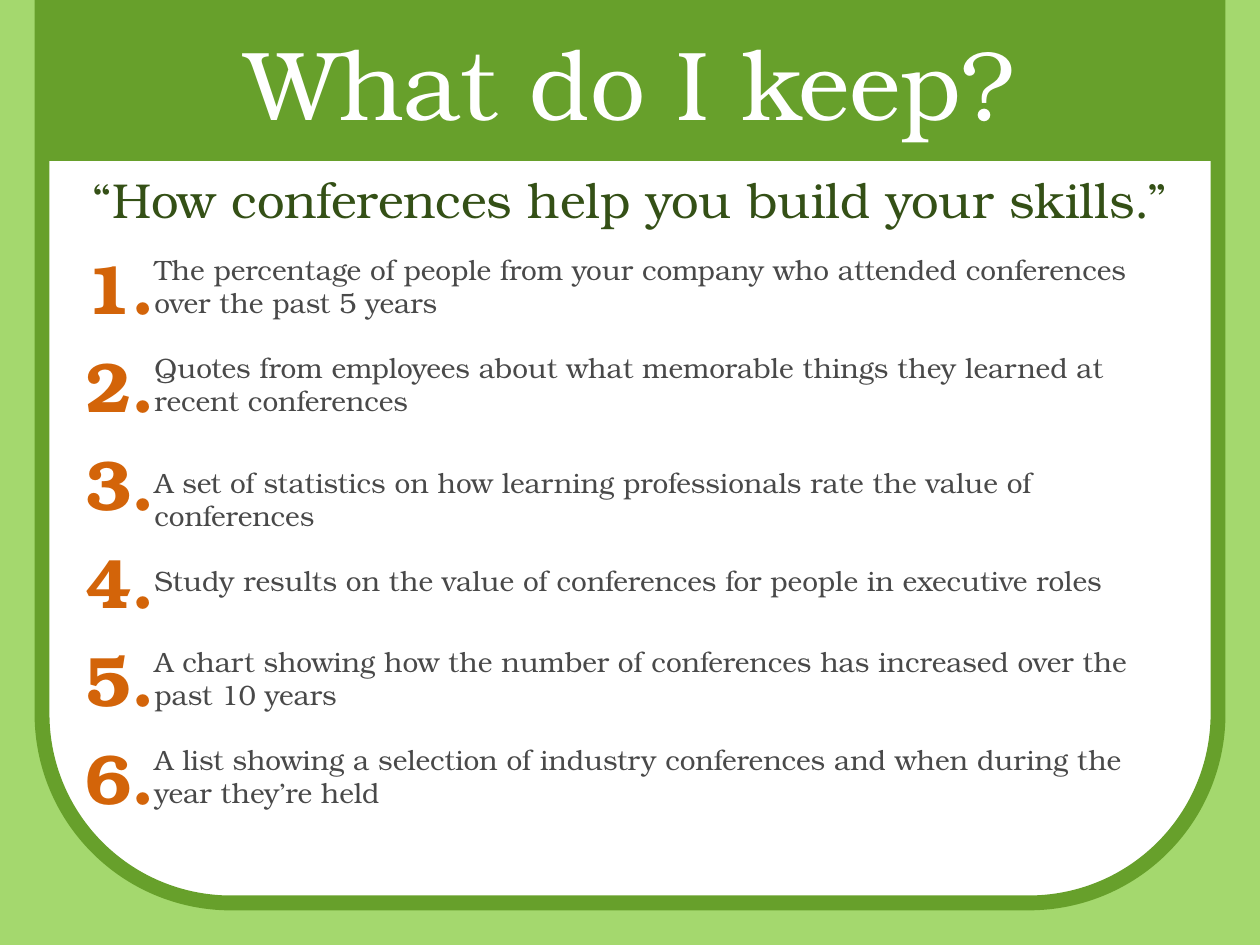
from pptx import Presentation
from pptx.dml.color import RGBColor
from pptx.enum.shapes import MSO_SHAPE as SHAPE
from pptx.enum.text import MSO_AUTO_SIZE as AUTO, PP_ALIGN as ALIGN
from pptx.util import Emu, Pt

FONT = "TeX Gyre Bonum"
GREEN, LIGHT, DARK = "67A02B", "A4D86E", "345016"
WHITE, ORANGE, GREY = "FFFFFF", "D36409", "494949"

TITLE = "What do I keep?"
SUBTITLE = "“How conferences help you build your skills.”"
# Each item: text, lines its box is sized for
ITEMS = [
    ("The percentage of people from your company who attended conferences over the past 5 years", 2),
    ("Quotes from employees about what memorable things they learned at recent conferences", 2),
    ("A set of statistics on how learning professionals rate the value of conferences", 1),
    ("Study results on the value of conferences for people in executive roles", 1),
    ("A chart showing how the number of conferences has increased over the past 10 years", 2),
    ("A list showing a selection of industry conferences and when during the year they’re held", 2),
]
LIST_TOP, ROW_PITCH, NUMBER_H = 238, 98, 97
TEXT_H = {1: 47, 2: 81}


def px(*values):
    return [Emu(round(v * 914400 / 126)) for v in values]


def color(hex_value):
    return RGBColor.from_string(hex_value)


def add_panel(shapes, kind, box, fill, line=None, width=0):
    sp = shapes.add_shape(kind, *px(*box))
    sp.shadow.inherit = False
    sp.fill.solid()
    sp.fill.fore_color.rgb = color(fill)
    if line:
        sp.line.color.rgb = color(line)
        sp.line.width = Pt(width)
    else:
        sp.line.fill.background()
    return sp


def add_text(shapes, text, box, size, fill, bold=False, align=ALIGN.LEFT):
    tf = shapes.add_textbox(*px(*box)).text_frame
    tf.word_wrap = True
    tf.auto_size = AUTO.SHAPE_TO_FIT_TEXT
    p = tf.paragraphs[0]
    p.alignment = align
    r = p.add_run()
    r.text = text
    r.font.name, r.font.size, r.font.bold = FONT, Pt(size), bold
    r.font.color.rgb = color(fill)


prs = Presentation()
prs.slide_width, prs.slide_height = px(1260, 945)
slide = prs.slides.add_slide(prs.slide_layouts[6])
slide.background.fill.solid()
slide.background.fill.fore_color.rgb = color(LIGHT)
shapes = slide.shapes

# White panel, its rounded top above the slide edge
add_panel(shapes, SHAPE.ROUNDED_RECTANGLE, (42, -231, 1176, 1134), WHITE, GREEN, 8.5)

# Numbered list, each number grouped with its text
for i, (text, lines) in enumerate(ITEMS):
    top = LIST_TOP + i * ROW_PITCH
    height = TEXT_H[lines]
    row = shapes.add_group_shape().shapes
    add_text(row, f"{i + 1}.", (73, top, 108, NUMBER_H), 40, ORANGE, bold=True)
    add_text(row, text, (142, top + (NUMBER_H - height) / 2, 1016, height), 16, GREY)

# Header band, title and subtitle
add_panel(shapes, SHAPE.RECTANGLE, (42, 0, 1176, 161), GREEN)
add_text(shapes, TITLE, (105, 16, 1050, 131), 56, WHITE, align=ALIGN.CENTER)
add_text(shapes, SUBTITLE, (42, 163, 1176, 72), 28, DARK, align=ALIGN.CENTER)

prs.save("out.pptx")
